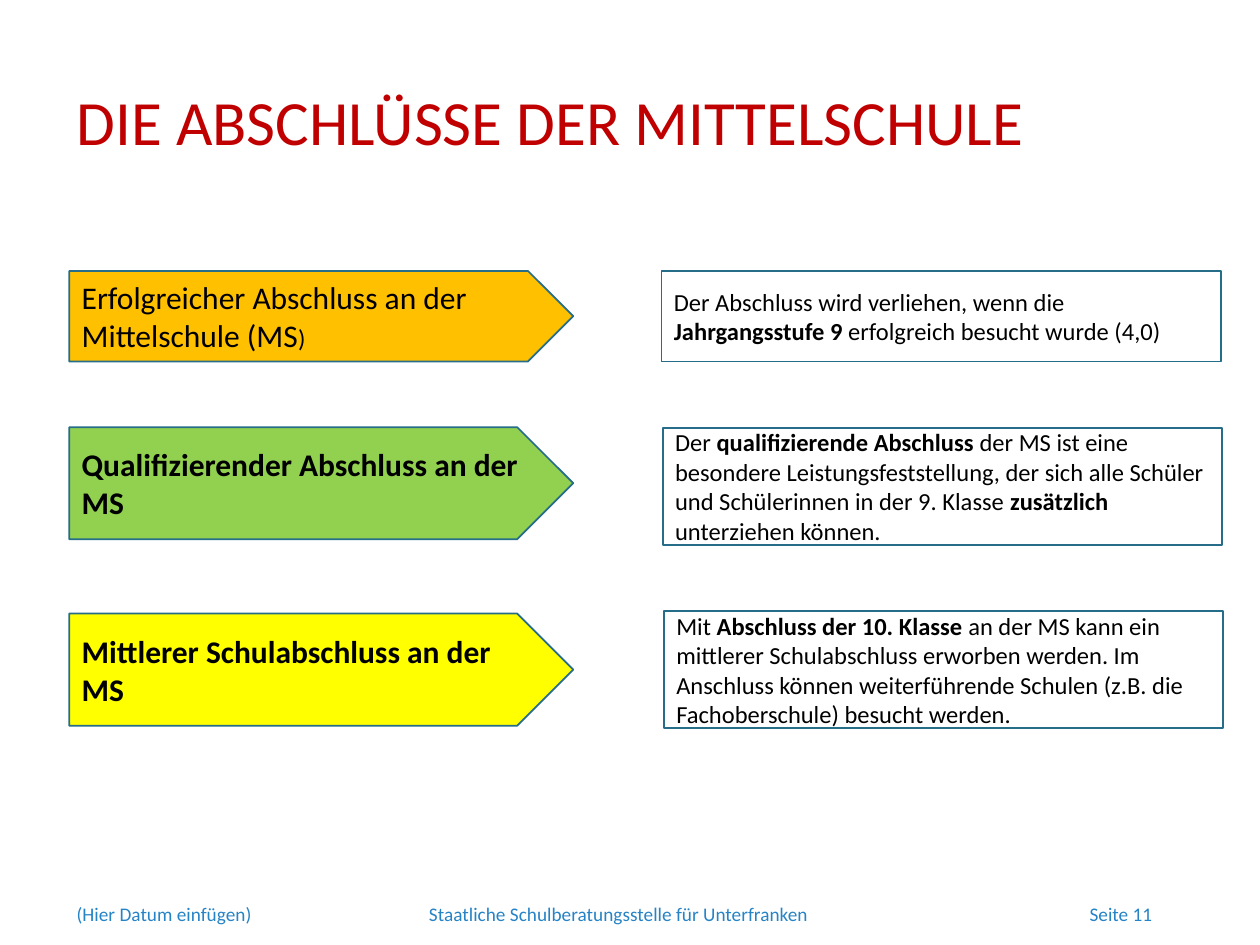
from pptx import Presentation
from pptx.dml.color import RGBColor
from pptx.enum.shapes import MSO_SHAPE as SHAPE
from pptx.enum.text import MSO_ANCHOR as ANCHOR, PP_ALIGN as ALIGN
from pptx.util import Pt

COLORS = {
    "red": "C00000", "blue": "2683C6", "edge": "266D8A",
    "black": "000000", "white": "FFFFFF",
    "orange": "FFC000", "green": "92D050", "yellow": "FFFF00",
}


def rgb(name):
    return RGBColor.from_string(COLORS[name])


def write(shape, runs, color, align=ALIGN.LEFT, anchor=ANCHOR.MIDDLE):
    """Fill a shape with one paragraph of (text, size, bold) runs."""
    frame = shape.text_frame
    frame.word_wrap = True
    frame.vertical_anchor = anchor
    para = frame.paragraphs[0]
    para.alignment = align
    for text, size, bold in runs:
        run = para.add_run()
        run.text = text
        font = run.font
        font.name, font.size, font.bold = "Calibri", Pt(size), bold
        font.color.rgb = rgb(color)
    return para


deck = Presentation()
deck.slide_width, deck.slide_height = Pt(720), Pt(540)
slide = deck.slides.add_slide(deck.slide_layouts[6])
shapes = slide.shapes

# Footer
footer = [
    (209.5, 288, "Staatliche Schulberatungsstelle für Unterfranken", ALIGN.CENTER, 7.2),
    (36.7, 185.8, "(Hier Datum einfügen)", ALIGN.LEFT, 7.2),
    (572.4, 98.6, "Seite 11", ALIGN.RIGHT, 12.5),
]
for left, width, text, align, inset in footer:
    box = shapes.add_textbox(Pt(left), Pt(511.9), Pt(width), Pt(20.9))
    box.text_frame.margin_right = Pt(inset)
    write(box, [(text, 11, False)], "blue", align, ANCHOR.TOP)

# Title
title = shapes.add_textbox(Pt(36.7), Pt(31.7), Pt(581.8), Pt(79.2))
head = write(title, [("DIE ABSCHLÜSSE DER MITTELSCHULE", 36, False)], "red")
head.line_spacing = 0.9

# Degrees: arrow on the left, explanation on the right
# Each half: left, top, width, height, fill, runs
degrees = [
    (SHAPE.PENTAGON, 39.6, 154.8, 288, 51.8, "orange", [
        ("Erfolgreicher Abschluss an der Mittelschule (MS", 18, False),
        (")", 14, False)]),
    (SHAPE.RECTANGLE, 378, 154.8, 319.7, 51.8, "white", [
        ("Der Abschluss wird verliehen, wenn die ", 14, False),
        ("Jahrgangsstufe 9 ", 14, True),
        ("erfolgreich besucht wurde (4,0)", 14, False)]),
    (SHAPE.PENTAGON, 39.6, 244.1, 288, 64.1, "green", [
        ("Qualifizierender Abschluss an der MS", 18, True)]),
    (SHAPE.RECTANGLE, 378.7, 244.4, 319.7, 67, "white", [
        ("Der ", 14, False),
        ("qualifizierende Abschluss ", 14, True),
        ("der MS ist eine besondere Leistungsfeststellung, der sich alle "
         "Schüler und Schülerinnen in der 9. Klasse ", 14, False),
        ("zusätzlich", 14, True),
        (" unterziehen können.", 14, False)]),
    (SHAPE.PENTAGON, 39.6, 350.6, 288, 64.1, "yellow", [
        ("Mittlerer Schulabschluss an der MS", 18, True)]),
    (SHAPE.RECTANGLE, 379.4, 349.2, 319.7, 67, "white", [
        ("Mit ", 14, False),
        ("Abschluss der 10. Klasse ", 14, True),
        ("an der MS kann ein mittlerer Schulabschluss erworben werden. "
         "Im Anschluss können weiterführende Schulen (z.B. die "
         "Fachoberschule) besucht werden.", 14, False)]),
]
for kind, left, top, width, height, fill, runs in degrees:
    shape = shapes.add_shape(kind, Pt(left), Pt(top), Pt(width), Pt(height))
    shape.shadow.inherit = False
    shape.fill.solid()
    shape.fill.fore_color.rgb = rgb(fill)
    shape.line.color.rgb = rgb("edge")
    shape.line.width = Pt(1)
    write(shape, runs, "black")

deck.save("out.pptx")
